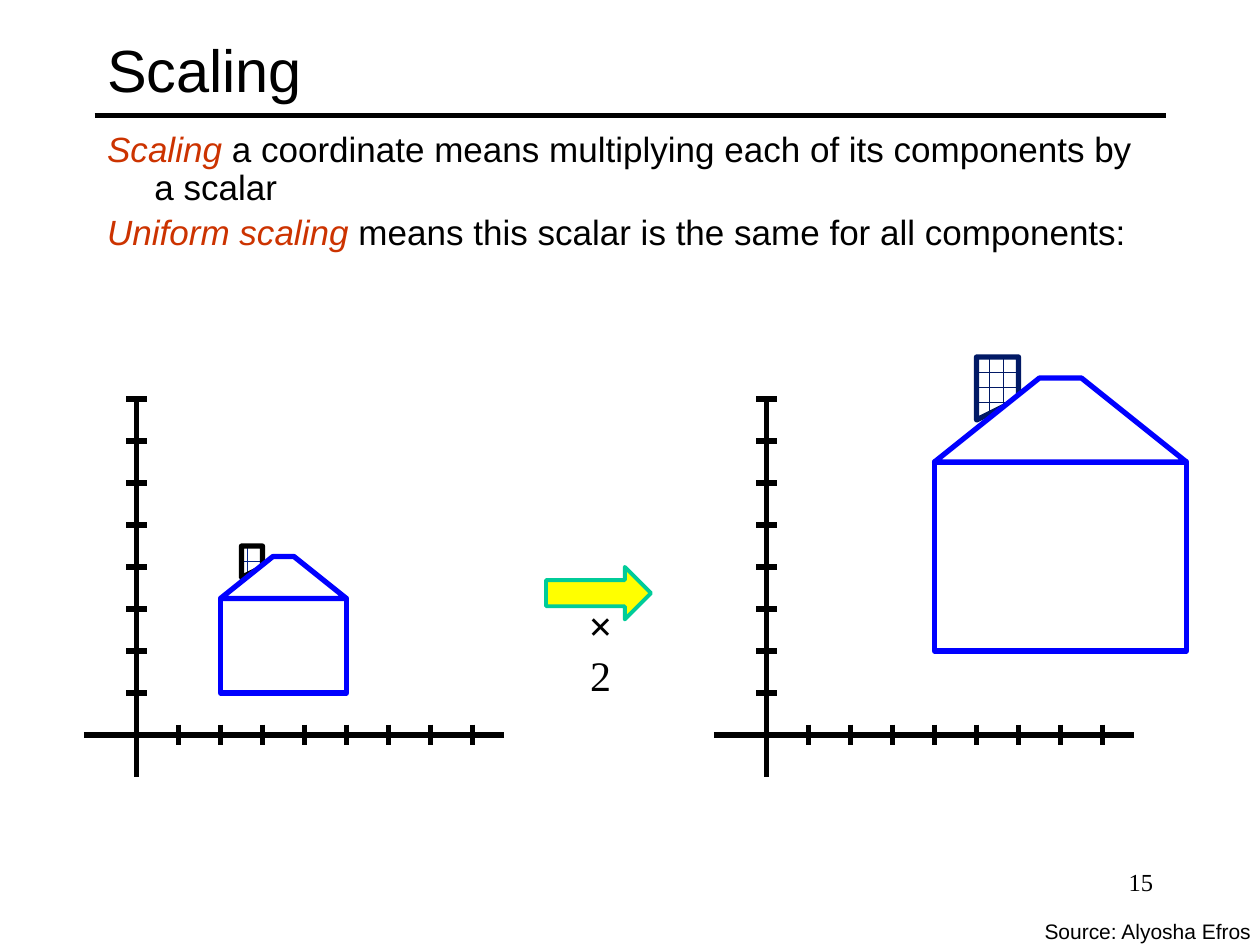
"""Build a slide that shows uniform scaling of a house by a factor of two."""

from dataclasses import dataclass
from typing import NamedTuple

from lxml.etree import SubElement
from pptx import Presentation
from pptx.dml.color import RGBColor
from pptx.enum.dml import MSO_PATTERN
from pptx.enum.shapes import MSO_CONNECTOR, MSO_SHAPE
from pptx.enum.text import MSO_ANCHOR, MSO_AUTO_SIZE, PP_ALIGN
from pptx.oxml.ns import qn
from pptx.util import Emu, Pt

EMU_PER_PX = 7620
UNIT = 40
TICK_COUNT = 8
TICK_HALF = 10


@dataclass(frozen=True)
class Theme:
    sans: str = "Arial"
    serif: str = "Times New Roman"
    black: RGBColor = RGBColor(0, 0, 0)
    white: RGBColor = RGBColor(255, 255, 255)
    accent: RGBColor = RGBColor(0xCC, 0x33, 0x00)
    house: RGBColor = RGBColor(0, 0, 255)
    brick: RGBColor = RGBColor(0x03, 0x23, 0x89)
    dark_brick: RGBColor = RGBColor(0x01, 0x19, 0x65)
    arrow: RGBColor = RGBColor(255, 255, 0)
    arrow_edge: RGBColor = RGBColor(0x00, 0xCC, 0x99)
    title_size: float = 34
    body_size: float = 20
    factor_size: float = 24
    number_size: float = 14
    source_size: float = 12
    stroke: float = 3
    arrow_stroke: float = 2.25


class Point(NamedTuple):
    x: int
    y: int


class Box(NamedTuple):
    left: int
    top: int
    width: int
    height: int


class Definition(NamedTuple):
    term: str
    meaning: str


@dataclass(frozen=True)
class House:
    origin: Point
    scale: int
    brick: RGBColor
    chimney_edge: RGBColor


THEME = Theme()
CHIMNEY = [Point(100, 150), Point(100, 180), Point(120, 180), Point(120, 160)]
WALLS = Box(80, 130, 120, 90)
ROOF = [Point(80, 130), Point(130, 170), Point(150, 170), Point(200, 130)]
HOUSES = [
    House(Point(130, 700), 1, THEME.brick, THEME.black),
    House(Point(730, 700), 2, THEME.dark_brick, THEME.dark_brick),
]
DEFINITIONS = [
    Definition("Scaling", " a coordinate means multiplying each of its components by a scalar"),
    Definition("Uniform scaling", " means this scalar is the same for all components:"),
]


def px(length: int) -> Emu:
    return Emu(length * EMU_PER_PX)


def place(shape, box: Box) -> None:
    shape.left, shape.top, shape.width, shape.height = map(px, box)


def set_font(paragraph, name: str, size: float) -> None:
    paragraph.font.name = name
    paragraph.font.size = Pt(size)
    paragraph.font.color.rgb = THEME.black


def draw_line(slide, start: Point, end: Point) -> None:
    line = slide.shapes.add_connector(MSO_CONNECTOR.STRAIGHT, *map(px, start + end))
    line.line.color.rgb = THEME.black
    line.line.width = Pt(THEME.stroke)
    SubElement(line._element.spPr, qn("a:effectLst"))


def paint(shape, fill: RGBColor, edge: RGBColor, width: float = THEME.stroke) -> None:
    shape.shadow.inherit = False
    shape.fill.solid()
    shape.fill.fore_color.rgb = fill
    shape.line.color.rgb = edge
    shape.line.width = Pt(width)


def draw_axes(slide, origin: Point) -> None:
    x, y = origin
    draw_line(slide, Point(x, y - TICK_COUNT * UNIT), Point(x, y + UNIT))
    draw_line(slide, Point(x - 50, y), Point(x + 350, y))
    for step in range(UNIT, (TICK_COUNT + 1) * UNIT, UNIT):
        draw_line(slide, Point(x + step, y - TICK_HALF), Point(x + step, y + TICK_HALF))
        draw_line(slide, Point(x - TICK_HALF, y - step), Point(x + TICK_HALF, y - step))


def draw_outline(slide, points: list[Point], house: House):
    placed = [
        Point(house.origin.x + house.scale * x, house.origin.y - house.scale * y)
        for x, y in points
    ]
    builder = slide.shapes.build_freeform(*placed[0], scale=EMU_PER_PX)
    builder.add_line_segments(placed[1:], close=True)
    return builder.convert_to_shape()


def draw_house(slide, house: House) -> None:
    chimney = draw_outline(slide, CHIMNEY, house)
    paint(chimney, THEME.white, house.chimney_edge)
    chimney.fill.patterned()
    chimney.fill.pattern = MSO_PATTERN.HORIZONTAL_BRICK
    chimney.fill.fore_color.rgb = house.brick
    chimney.fill.back_color.rgb = THEME.white

    left, top, width, height = (house.scale * length for length in WALLS)
    box = Box(house.origin.x + left, house.origin.y - top, width, height)
    walls = slide.shapes.add_shape(MSO_SHAPE.RECTANGLE, *map(px, box))
    paint(walls, THEME.white, THEME.house)
    paint(draw_outline(slide, ROOF, house), THEME.white, THEME.house)


def add_text(slide, box: Box, text: str, name: str, size: float, align: PP_ALIGN):
    frame = slide.shapes.add_textbox(*map(px, box)).text_frame
    frame.word_wrap = True
    paragraph = frame.paragraphs[0]
    paragraph.alignment = align
    set_font(paragraph, name, size)
    paragraph.add_run().text = text
    return frame


def fill_title(title) -> None:
    place(title, Box(90, 10, 1020, 110))
    title.text_frame.text = "Scaling"
    title.text_frame.vertical_anchor = MSO_ANCHOR.MIDDLE
    title.text_frame.auto_size = MSO_AUTO_SIZE.NONE
    paragraph = title.text_frame.paragraphs[0]
    paragraph.alignment = PP_ALIGN.LEFT
    set_font(paragraph, THEME.sans, THEME.title_size)


def fill_body(body) -> None:
    place(body, Box(90, 120, 1020, 314))
    frame = body.text_frame
    frame.auto_size = MSO_AUTO_SIZE.NONE
    for index, definition in enumerate(DEFINITIONS):
        paragraph = frame.add_paragraph() if index else frame.paragraphs[0]
        set_font(paragraph, THEME.sans, THEME.body_size)
        paragraph.line_spacing = 0.9
        paragraph.space_before = Pt(4)
        properties = paragraph._p.get_or_add_pPr()
        properties.set("marL", str(px(45)))
        properties.set("indent", str(px(-45)))
        properties.insert_element_before(
            properties.makeelement(qn("a:buNone")), "a:tabLst", "a:defRPr", "a:extLst"
        )
        term = paragraph.add_run()
        term.text = definition.term
        term.font.italic = True
        term.font.color.rgb = THEME.accent
        paragraph.add_run().text = definition.meaning


def main() -> None:
    presentation = Presentation()
    presentation.slide_width, presentation.slide_height = px(1200), px(900)
    slide = presentation.slides.add_slide(presentation.slide_layouts[1])
    draw_line(slide, Point(90, 110), Point(1110, 110))
    fill_title(slide.shapes.title)
    fill_body(slide.placeholders[1])
    for house in HOUSES:
        draw_axes(slide, house.origin)
        draw_house(slide, house)

    arrow = slide.shapes.add_shape(MSO_SHAPE.RIGHT_ARROW, *map(px, Box(520, 540, 100, 50)))
    paint(arrow, THEME.arrow, THEME.arrow_edge, THEME.arrow_stroke)
    factor = add_text(
        slide, Box(534, 589, 76, 60), "× ", THEME.serif, THEME.factor_size, PP_ALIGN.CENTER
    )
    factor.vertical_anchor = MSO_ANCHOR.MIDDLE
    factor.paragraphs[0].runs[0].font.bold = True
    factor.paragraphs[0].add_run().text = "2"
    add_text(slide, Box(983, 869, 336, 36), "Source: Alyosha Efros",
             THEME.sans, THEME.source_size, PP_ALIGN.LEFT)
    add_text(slide, Box(860, 820, 250, 60), "15",
             THEME.serif, THEME.number_size, PP_ALIGN.RIGHT)
    presentation.save("out.pptx")


if __name__ == "__main__":
    main()
